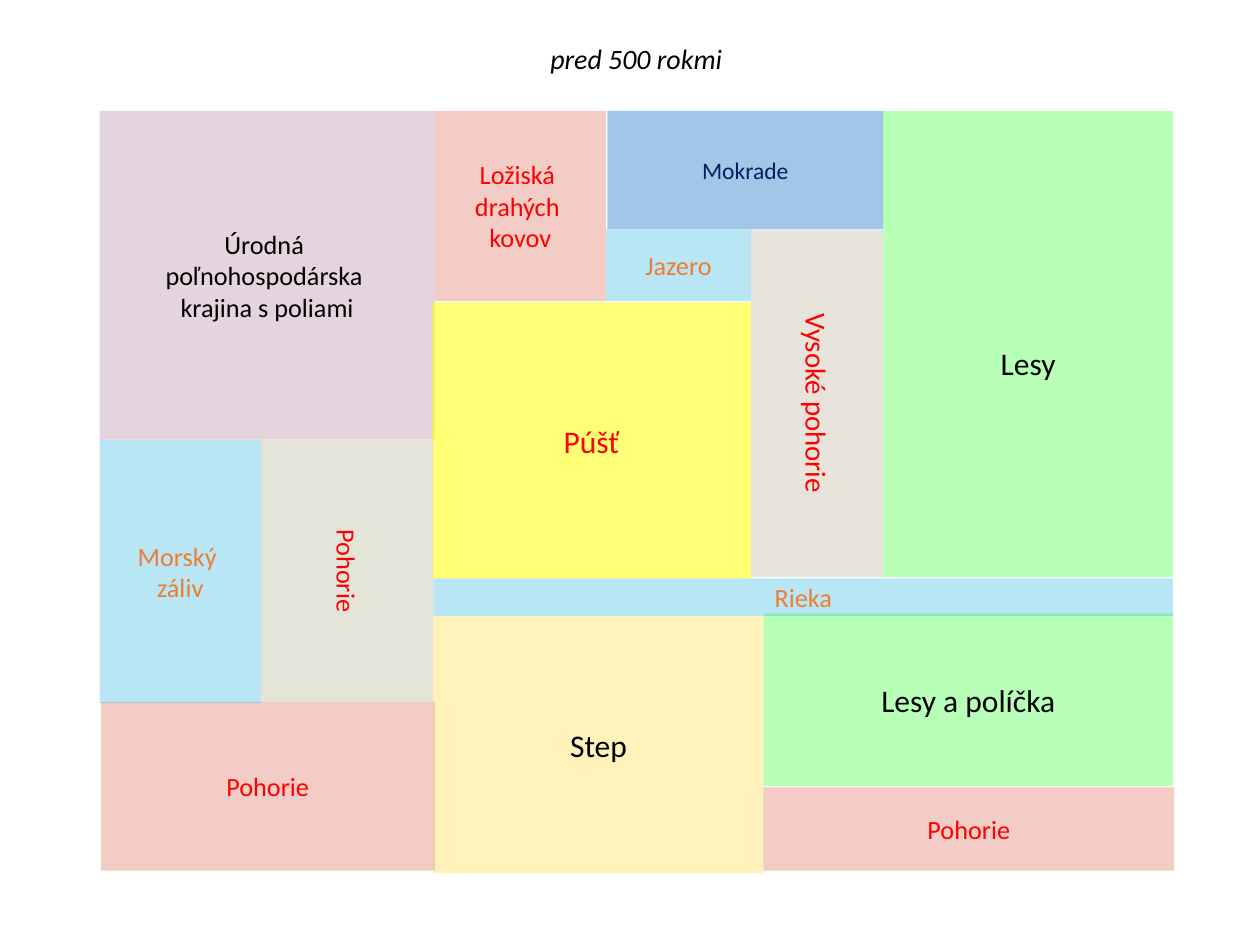
from dataclasses import dataclass, field

from lxml import etree
from pptx import Presentation
from pptx.dml.color import RGBColor
from pptx.enum import shapes, text
from pptx.oxml import ns
from pptx.util import Inches, Pt


@dataclass(frozen=True)
class Theme:
    """Font, type formats and land fills (colour, opacity percent)."""
    font: str = "Calibri"
    formats: dict = field(default_factory=lambda: {
        "title": {"size": 16, "color": "000000", "italic": True},
        "open": {"size": 18, "color": "000000"},
        "farm": {"size": 15, "color": "000000"},
        "desert": {"size": 18, "color": "FF0000"},
        "range": {"size": 16.5, "color": "FF0000"},
        "rock": {"size": 15, "color": "FF0000"},
        "water": {"size": 15, "color": "ED7D31"},
        "marsh": {"size": 13.5, "color": "002060"},
    })
    fills: dict = field(default_factory=lambda: {
        "forest": ("00FF00", 28),
        "marsh": ("5B9BD5", 57),
        "farm": ("954F72", 24),
        "desert": ("FFFF00", 54),
        "water": ("11A9DF", 29),
        "rock": ("D34831", 28),
        "steppe": ("FFCC00", 27),
        "range": ("DBD9C9", 66),
        "hills": ("DBD9C9", 70),
    })


@dataclass(frozen=True)
class Land:
    """One area of the map, with its box measured from the map's corner."""
    label: str
    box: tuple
    fill: str
    format: str
    rotation: int = 0
    top_inset: float = 0.05


THEME = Theme()
LANDS = [
    Land("Lesy", (6.22, 0, 2.3, 3.7), "forest", "open", top_inset=0.35),
    Land("Mokrade", (4.03, 0, 2.19, 0.94), "marsh", "marsh"),
    Land("Úrodná \npoľnohospodárska \nkrajina s poliami", (0, 0, 2.66, 2.61), "farm", "farm"),
    Land("Púšť", (2.64, 1.52, 2.53, 2.19), "desert", "desert"),
    Land("Rieka", (2.65, 3.71, 5.87, 0.3), "water", "water"),
    Land("Pohorie", (5.27, 5.37, 3.26, 0.66), "rock", "rock"),
    Land("Step", (2.65, 4.01, 2.62, 2.04), "steppe", "open"),
    Land("Pohorie", (0.01, 4.69, 2.65, 1.34), "rock", "rock"),
    Land("Vysoké pohorie", (5.17, 0.94, 1.05, 2.76), "range", "range", rotation=90),
    Land("Morský \nzáliv", (0, 2.61, 1.28, 2.09), "water", "water"),
    Land("Pohorie", (1.28, 2.61, 1.37, 2.08), "hills", "rock", rotation=90),
    Land("Lesy a políčka", (5.27, 3.99, 3.25, 1.37), "forest", "open"),
    Land("Ložiská \vdrahých \vkovov", (2.66, 0, 1.36, 1.51), "rock", "rock"),
    Land("Jazero", (4.02, 0.94, 1.15, 0.57), "water", "water"),
]


def write_label(frame, label, style):
    """Fill a text frame with centred text in one of the theme's formats."""
    frame.text = label
    values = dict(THEME.formats[style], name=THEME.font)
    color = RGBColor.from_string(values.pop("color"))
    values["size"] = Pt(values["size"])
    for paragraph in frame.paragraphs:
        paragraph.alignment = text.PP_ALIGN.CENTER
        for run in paragraph.runs:
            run.font.color.rgb = color
            for name, value in values.items():
                setattr(run.font, name, value)


def paint(area, color, opacity):
    """Give an area a translucent fill without line or shadow."""
    area.shadow.inherit = False
    area.line.fill.background()
    area.fill.solid()
    area.fill.fore_color.rgb = RGBColor.from_string(color)
    tint = area.fill._xPr.find(".//" + ns.qn("a:srgbClr"))
    etree.SubElement(tint, ns.qn("a:alpha"), val=str(opacity * 1000))


def add_land(group, land, left, top):
    """Draw one land, turning its box about the centre when it is rotated."""
    x, y, width, height = land.box
    if land.rotation:
        x, y = x + (width - height) / 2, y + (height - width) / 2
        width, height = height, width
    area = group.shapes.add_shape(
        shapes.MSO_SHAPE.RECTANGLE,
        Inches(left + x), Inches(top + y), Inches(width), Inches(height))
    area.rotation = land.rotation
    paint(area, *THEME.fills[land.fill])
    frame = area.text_frame
    frame.word_wrap = False
    frame.vertical_anchor = text.MSO_ANCHOR.MIDDLE
    frame.margin_top = Inches(land.top_inset)
    write_label(frame, land.label, land.format)


def add_map(slide, left, top):
    """Draw all lands as one group from the map's top left corner."""
    group = slide.shapes.add_group_shape()
    for land in LANDS:
        add_land(group, land, left, top)


def add_title(slide, left, top, width, height):
    """Write the map's period above it."""
    title = slide.shapes.add_textbox(
        Inches(left), Inches(top), Inches(width), Inches(height))
    title.text_frame.word_wrap = True
    title.text_frame.auto_size = text.MSO_AUTO_SIZE.SHAPE_TO_FIT_TEXT
    write_label(title.text_frame, "pred 500 rokmi", "title")


def main():
    """Build the slide and save it."""
    deck = Presentation()
    deck.slide_width, deck.slide_height = Inches(10), Inches(7.5)
    slide = deck.slides.add_slide(deck.slide_layouts[6])
    add_map(slide, 0.79, 0.88)
    add_title(slide, 1.3, 0.28, 7.5, 0.37)
    deck.save("out.pptx")


if __name__ == "__main__":
    main()
